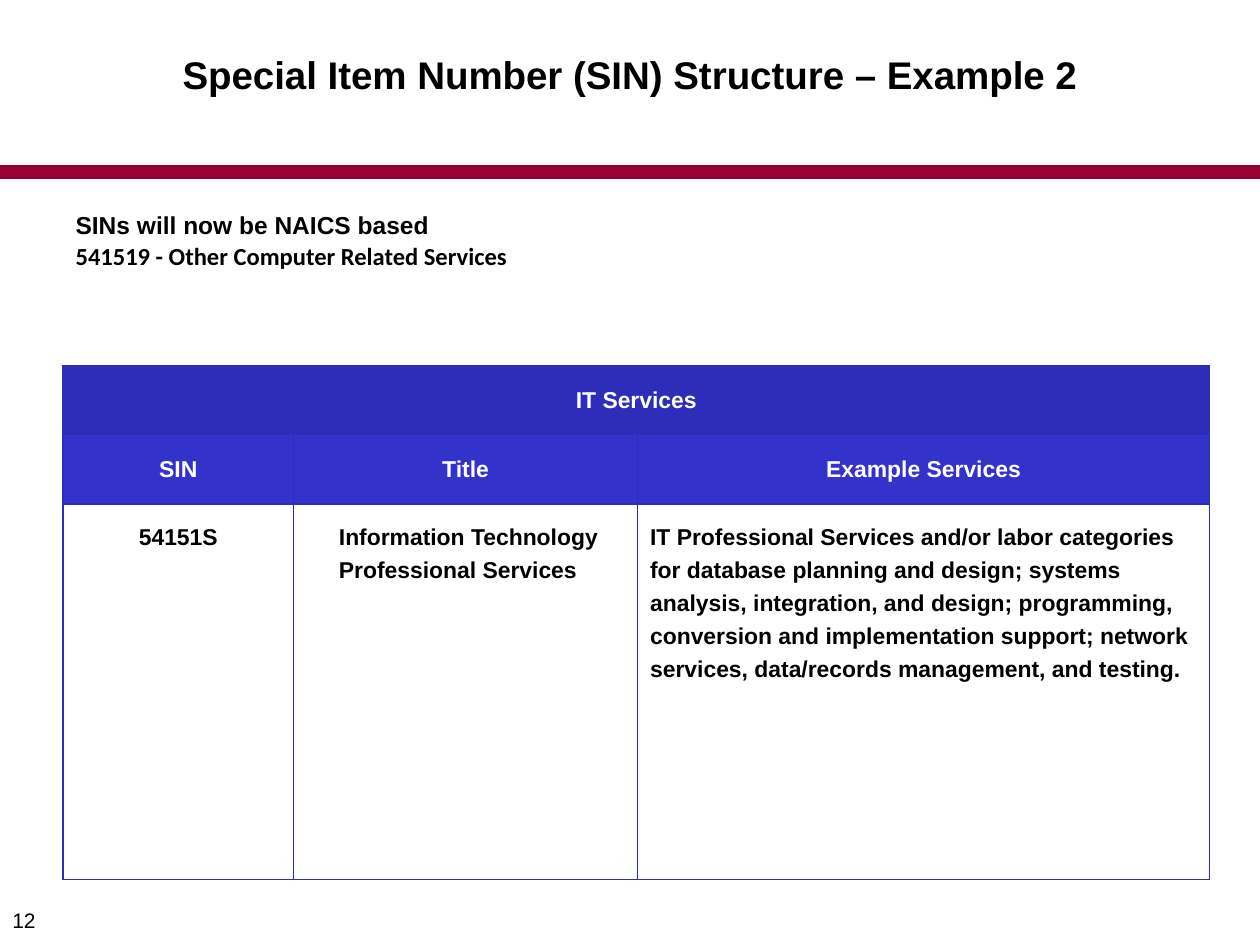
"""Build the Special Item Number structure slide with its IT Services table."""
from lxml.etree import SubElement
from pptx import Presentation
from pptx.dml.color import RGBColor
from pptx.enum.shapes import MSO_SHAPE
from pptx.enum.text import MSO_ANCHOR, MSO_AUTO_SIZE, PP_ALIGN
from pptx.oxml.ns import qn
from pptx.util import Inches, Pt

BLACK = RGBColor(0x00, 0x00, 0x00)
WHITE = RGBColor(0xFF, 0xFF, 0xFF)
MAROON = RGBColor(0x99, 0x00, 0x33)
NAVY = RGBColor(0x2D, 0x2D, 0xB9)
BLUE = RGBColor(0x33, 0x33, 0xCC)

TITLE = "Special Item Number (SIN) Structure – Example 2"
INTRO = [
    ("SINs will now be NAICS based", {"font": "Arial", "spacing": 1.5}),
    ("541519 - Other Computer Related Services", {"font": "Calibri", "spacing": 1.07}),
]
PAGE_NUMBER = "12"
TABLE_TITLE = "IT Services"
HEADERS = ["SIN", "Title", "Example Services"]
DETAILS = [
    ("54151S", {"align": PP_ALIGN.CENTER}),
    ("Information Technology Professional Services", {"indent": 0.26}),
    ("IT Professional Services and/or labor categories for database planning and design; "
     "systems analysis, integration, and design; programming, conversion and implementation "
     "support; network services, data/records management, and testing.", {}),
]
COLUMN_WIDTHS = [1.83, 2.73, 4.54]
ROW_HEIGHTS = [0.55, 0.55, 2.98]


def write(paragraph, text, size=14, font="Arial", color=BLACK, bold=True,
          align=PP_ALIGN.LEFT, spacing=1.0, indent=0):
    properties = paragraph._p.get_or_add_pPr()
    properties.set("marL", str(Inches(indent)))
    properties.set("indent", "0")
    paragraph.alignment = align
    paragraph.line_spacing = spacing
    paragraph.space_before = Pt(0)
    SubElement(properties, qn("a:buNone"))
    run = paragraph.add_run()
    run.text = text
    run.font.size = Pt(size)
    run.font.name = font
    run.font.bold = bold
    run.font.color.rgb = color


def place(shape, left, top, width, height, anchor):
    shape.left, shape.top = Inches(left), Inches(top)
    shape.width, shape.height = Inches(width), Inches(height)
    frame = shape.text_frame
    frame.word_wrap = True
    frame.auto_size = MSO_AUTO_SIZE.NONE
    frame.vertical_anchor = anchor
    return frame


def format_cell(cell, fill, anchor):
    cell.margin_left = cell.margin_right = Inches(0.1)
    cell.margin_top = cell.margin_bottom = Inches(0.1)
    cell.vertical_anchor = anchor
    properties = cell._tc.get_or_add_tcPr()
    for side in ("a:lnL", "a:lnR", "a:lnT", "a:lnB"):
        line = SubElement(properties, qn(side), w=str(Pt(0.75)))
        SubElement(SubElement(line, qn("a:solidFill")), qn("a:srgbClr"), val=str(NAVY))
    if fill is None:
        cell.fill.background()
    else:
        cell.fill.solid()
        cell.fill.fore_color.rgb = fill


def add_services_table(slide):
    frame = slide.shapes.add_table(
        len(ROW_HEIGHTS), len(COLUMN_WIDTHS), Inches(0.5), Inches(2.9),
        Inches(sum(COLUMN_WIDTHS)), Inches(sum(ROW_HEIGHTS)))
    table = frame.table
    table.first_row = table.horz_banding = False
    for column, width in zip(table.columns, COLUMN_WIDTHS):
        column.width = Inches(width)
    row_styles = [(NAVY, MSO_ANCHOR.MIDDLE), (BLUE, MSO_ANCHOR.MIDDLE), (None, MSO_ANCHOR.TOP)]
    for row, height, (fill, anchor) in zip(table.rows, ROW_HEIGHTS, row_styles):
        row.height = Inches(height)
        for cell in row.cells:
            format_cell(cell, fill, anchor)
    table.cell(0, 0).merge(table.cell(0, len(COLUMN_WIDTHS) - 1))

    heading = {"size": 13.1, "color": WHITE, "align": PP_ALIGN.CENTER}
    write(table.cell(0, 0).text_frame.paragraphs[0], TABLE_TITLE, **heading)
    for index, (header, (detail, options)) in enumerate(zip(HEADERS, DETAILS)):
        write(table.cell(1, index).text_frame.paragraphs[0], header, **heading)
        write(table.cell(2, index).text_frame.paragraphs[0], detail,
              size=13.1, spacing=1.3, **options)


def main():
    presentation = Presentation()
    presentation.slide_width, presentation.slide_height = Inches(10), Inches(7.5)
    slide = presentation.slides.add_slide(presentation.slide_layouts[1])

    band = slide.shapes.add_shape(
        MSO_SHAPE.RECTANGLE, Inches(0), Inches(1.31), Inches(10), Inches(0.11))
    band.shadow.inherit = False
    band.fill.solid()
    band.fill.fore_color.rgb = MAROON
    band.line.fill.background()

    title = place(slide.shapes.title, 0.5, 0.38, 9, 0.46, MSO_ANCHOR.MIDDLE)
    write(title.paragraphs[0], TITLE, size=22, align=PP_ALIGN.CENTER, spacing=0.9)

    body = place(slide.placeholders[1], 0.5, 1.5, 9.11, 1.34, MSO_ANCHOR.TOP)
    for index, (text, options) in enumerate(INTRO):
        paragraph = body.add_paragraph() if index else body.paragraphs[0]
        write(paragraph, text, **options)

    add_services_table(slide)

    number_box = slide.shapes.add_textbox(0, 0, 0, 0)
    number = place(number_box, 0, 7.1, 2.33, 0.4, MSO_ANCHOR.MIDDLE)
    write(number.paragraphs[0], PAGE_NUMBER, size=12, bold=False)

    presentation.save("out.pptx")


if __name__ == "__main__":
    main()
